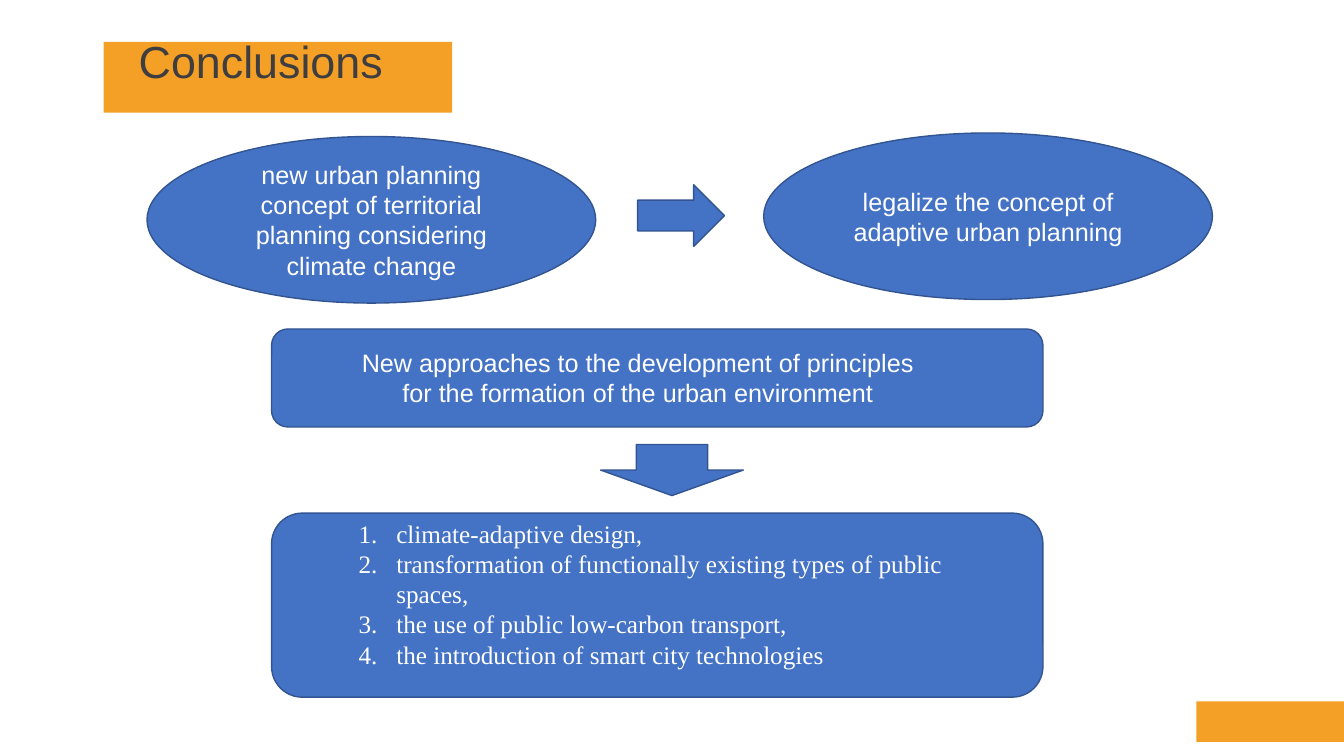
from lxml import etree
from pptx import Presentation
from pptx.dml.color import RGBColor
from pptx.enum.shapes import MSO_SHAPE
from pptx.enum.text import MSO_ANCHOR, PP_ALIGN
from pptx.oxml.ns import qn
from pptx.util import Pt

RECT, ROUND, OVAL = MSO_SHAPE.RECTANGLE, MSO_SHAPE.ROUNDED_RECTANGLE, MSO_SHAPE.OVAL
RIGHT, DOWN = MSO_SHAPE.RIGHT_ARROW, MSO_SHAPE.DOWN_ARROW
MIDDLE, TOP = MSO_ANCHOR.MIDDLE, MSO_ANCHOR.TOP
LEFT, CENTER = PP_ALIGN.LEFT, PP_ALIGN.CENTER

COLORS = {"orange": "F4A027", "blue": "4472C4", "edge": "325491",
          "white": "FFFFFF", "dark": "3E3E40"}
color = {name: RGBColor.from_string(code) for name, code in COLORS.items()}

deck = Presentation()
deck.slide_width, deck.slide_height = Pt(960), Pt(540)
slide = deck.slides.add_slide(deck.slide_layouts[6])


def add_block(kind, box, fill="blue", edge="edge"):
    shape = slide.shapes.add_shape(kind, *map(Pt, box))
    shape.shadow.inherit = False
    shape.fill.solid()
    shape.fill.fore_color.rgb = color[fill]
    if edge:
        shape.line.color.rgb = color[edge]
        shape.line.width = Pt(1)
    else:
        shape.line.fill.background()
    return shape


def add_text(shape, lines, align=CENTER, anchor=TOP, font="Arial", size=18,
             ink="white", number=False):
    frame = shape.text_frame
    frame.word_wrap = True
    frame.vertical_anchor = anchor
    for i, line in enumerate(lines):
        para = frame.paragraphs[0] if i == 0 else frame.add_paragraph()
        para.alignment = align
        if number:
            props = para._p.get_or_add_pPr()
            props.set("marL", str(Pt(27)))
            props.set("indent", str(-Pt(27)))
            etree.SubElement(props, qn("a:buFont"), typeface="+mj-lt")
            etree.SubElement(props, qn("a:buAutoNum"), type="arabicPeriod")
        run = para.add_run()
        run.text = line
        run.font.name, run.font.size = font, Pt(size)
        run.font.color.rgb = color[ink]
    return frame


# Orange bars
for box in [(854.5, 501, 105.5, 29), (74, 30, 249, 50.5)]:
    add_block(RECT, box, "orange", None)

# Title
title = slide.shapes.add_textbox(Pt(92), Pt(25), Pt(842), Pt(50))
frame = add_text(title, ["Conclusions"], LEFT, size=32, ink="dark")
frame.paragraphs[0].line_spacing = 0.9

# Top row: two ideas
ideas = [
    (105, 97.5, "new urban planning concept of territorial planning considering climate change"),
    (545.5, 95, "legalize the concept of adaptive urban planning"),
]
for x, y, words in ideas:
    add_text(add_block(OVAL, (x, y, 320.5, 119)), [words], anchor=MIDDLE)

# Panels
for y, height in [(235, 70), (366.5, 131.5)]:
    add_block(ROUND, (194, y, 551, height))

# Arrows
add_block(RIGHT, (455.5, 132, 62, 44))
add_block(DOWN, (429, 317.5, 102, 36.5))

# Panel texts
intro = slide.shapes.add_textbox(Pt(240), Pt(244.5), Pt(431), Pt(51))
add_text(intro, ["New approaches to the development of principles "
                 "for the formation of the urban environment"])

steps = slide.shapes.add_textbox(Pt(249), Pt(366.5), Pt(480), Pt(116.5))
add_text(steps, [
    "climate-adaptive design,",
    "transformation of functionally existing types of public spaces,",
    "the use of public low-carbon transport,",
    "the introduction of smart city technologies",
], LEFT, font="Times New Roman", number=True)

deck.save("out.pptx")
